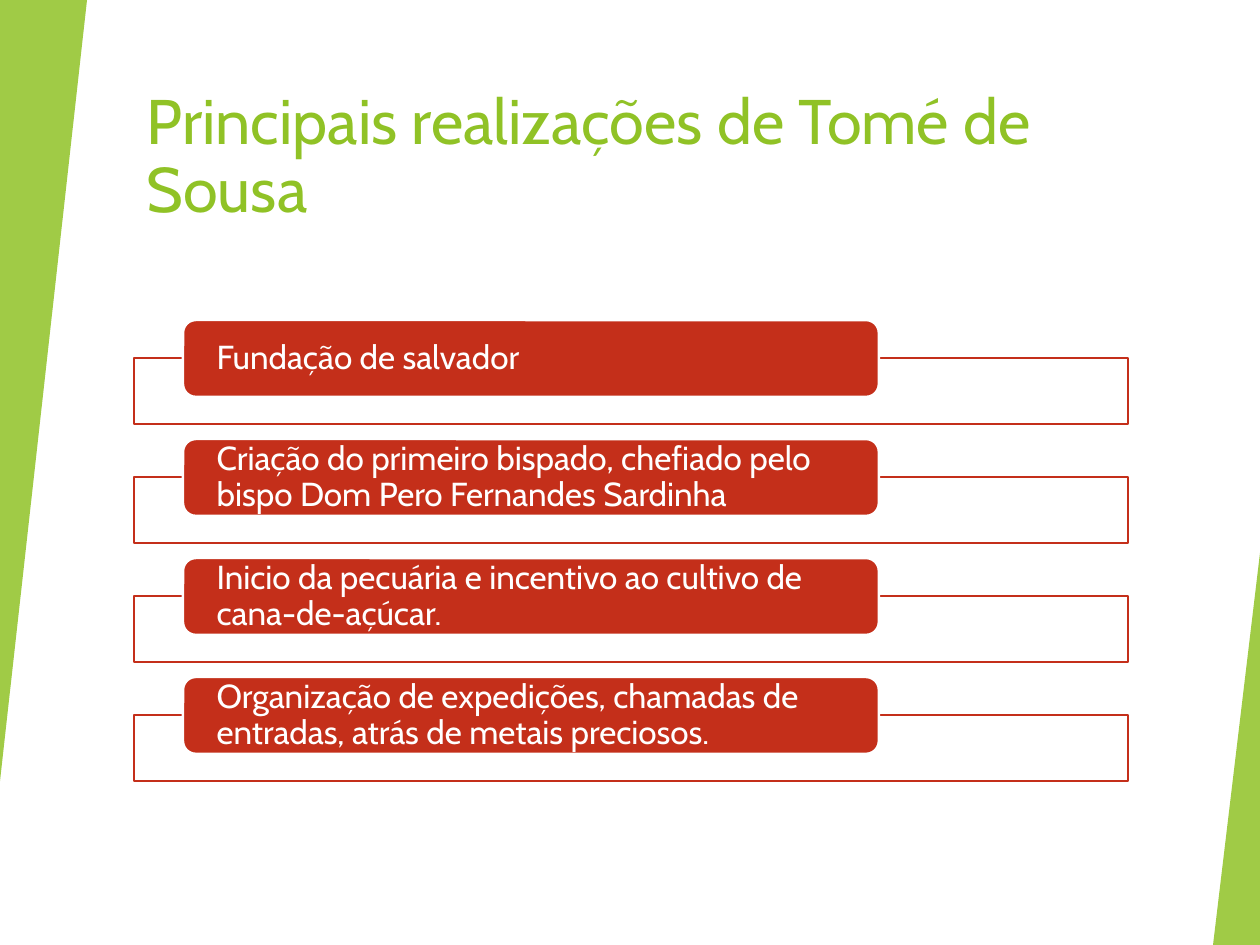
from dataclasses import dataclass

import pptx
import pptx.dml.color
import pptx.enum.shapes
import pptx.enum.text
import pptx.oxml.ns
import pptx.util
from lxml import etree

RGB = pptx.dml.color.RGBColor
SHAPE = pptx.enum.shapes.MSO_SHAPE
TEXT = pptx.enum.text

GREEN = RGB(0x90, 0xC2, 0x26)
RED = RGB(0xC4, 0x2F, 0x1A)
WHITE = RGB(0xFF, 0xFF, 0xFF)

SCALE = 914400 / 126  # EMU in one px
FONT = "Cabin"
PITCH = 119  # px from one item to the next
ITEMS = [
    "Fundação de salvador",
    "Criação do primeiro bispado, chefiado pelo bispo Dom Pero Fernandes Sardinha",
    "Inicio da pecuária e incentivo ao cultivo de cana-de-açúcar.",
    "Organização de expedições, chamadas de entradas, atrás de metais preciosos.",
]


@dataclass(frozen=True)
class Box:
    left: int
    top: int
    width: int
    height: int

    def down(self, px: int) -> "Box":
        return Box(self.left, self.top + px, self.width, self.height)

    def emu(self) -> list[int]:
        return [emu(n) for n in (self.left, self.top, self.width, self.height)]


@dataclass(frozen=True)
class Wedge:
    box: Box
    turn: int


FRAME = Box(134, 358, 994, 66)
LABEL = Box(183, 320, 696, 77)
TITLE = Box(134, 84, 1053, 151)
WEDGES = [Wedge(Box(0, 0, 87, 781), 180), Wedge(Box(1213, 553, 47, 392), 0)]


def emu(px: int) -> int:
    return round(px * SCALE)


def apply(thing, values: dict) -> None:
    for name, value in values.items():
        setattr(thing, name, value)


def draw(slide, kind, box: Box, fill: RGB, line: RGB | None = None, alpha: int = 100):
    """Add a flat shape; alpha is its opacity in percent."""
    shape = slide.shapes.add_shape(kind, *box.emu())
    shape.shadow.inherit = False
    shape.fill.solid()
    shape.fill.fore_color.rgb = fill
    if alpha < 100:
        color = shape.fill._xPr.find(".//" + pptx.oxml.ns.qn("a:srgbClr"))
        etree.SubElement(color, pptx.oxml.ns.qn("a:alpha"), val=str(alpha * 1000))
    if line is None:
        shape.line.fill.background()
    else:
        shape.line.color.rgb = line
        shape.line.width = pptx.util.Pt(1.5)
    return shape


def write(shape, text: str, size: int, color: RGB, frame: dict) -> None:
    body = shape.text_frame
    apply(body, {"text": text, "word_wrap": True,
                 "auto_size": TEXT.MSO_AUTO_SIZE.NONE, **frame})
    para = body.paragraphs[0]
    apply(para, {"alignment": TEXT.PP_ALIGN.LEFT, "line_spacing": 0.9})
    font = para.runs[0].font
    apply(font, {"name": FONT, "size": pptx.util.Pt(size)})
    font.color.rgb = color


def item(slide, index: int, text: str) -> None:
    shift = index * PITCH
    draw(slide, SHAPE.RECTANGLE, FRAME.down(shift), WHITE, RED, 90)
    label = draw(slide, SHAPE.ROUNDED_RECTANGLE, LABEL.down(shift), RED, WHITE)
    write(label, text, 19, WHITE, {
        "vertical_anchor": TEXT.MSO_ANCHOR.MIDDLE,
        "margin_left": emu(30), "margin_right": emu(30),
        "margin_top": 0, "margin_bottom": 0,
    })


def main() -> None:
    deck = pptx.Presentation()
    apply(deck, {"slide_width": emu(1260), "slide_height": emu(945)})
    slide = deck.slides.add_slide(deck.slide_layouts[5])
    slide.background.fill.solid()
    slide.background.fill.fore_color.rgb = WHITE

    # Title
    title = slide.shapes.title
    apply(title, dict(zip(("left", "top", "width", "height"), TITLE.emu())))
    write(title, "Principais realizações de Tomé de Sousa", 36, GREEN,
          {"vertical_anchor": TEXT.MSO_ANCHOR.TOP})

    # Green wedges at both edges
    for wedge in WEDGES:
        shape = draw(slide, SHAPE.ISOSCELES_TRIANGLE, wedge.box, GREEN, alpha=85)
        shape.adjustments[0] = 1
        shape.rotation = wedge.turn

    # List of achievements
    for index, text in enumerate(ITEMS):
        item(slide, index, text)

    deck.save("out.pptx")


if __name__ == "__main__":
    main()
